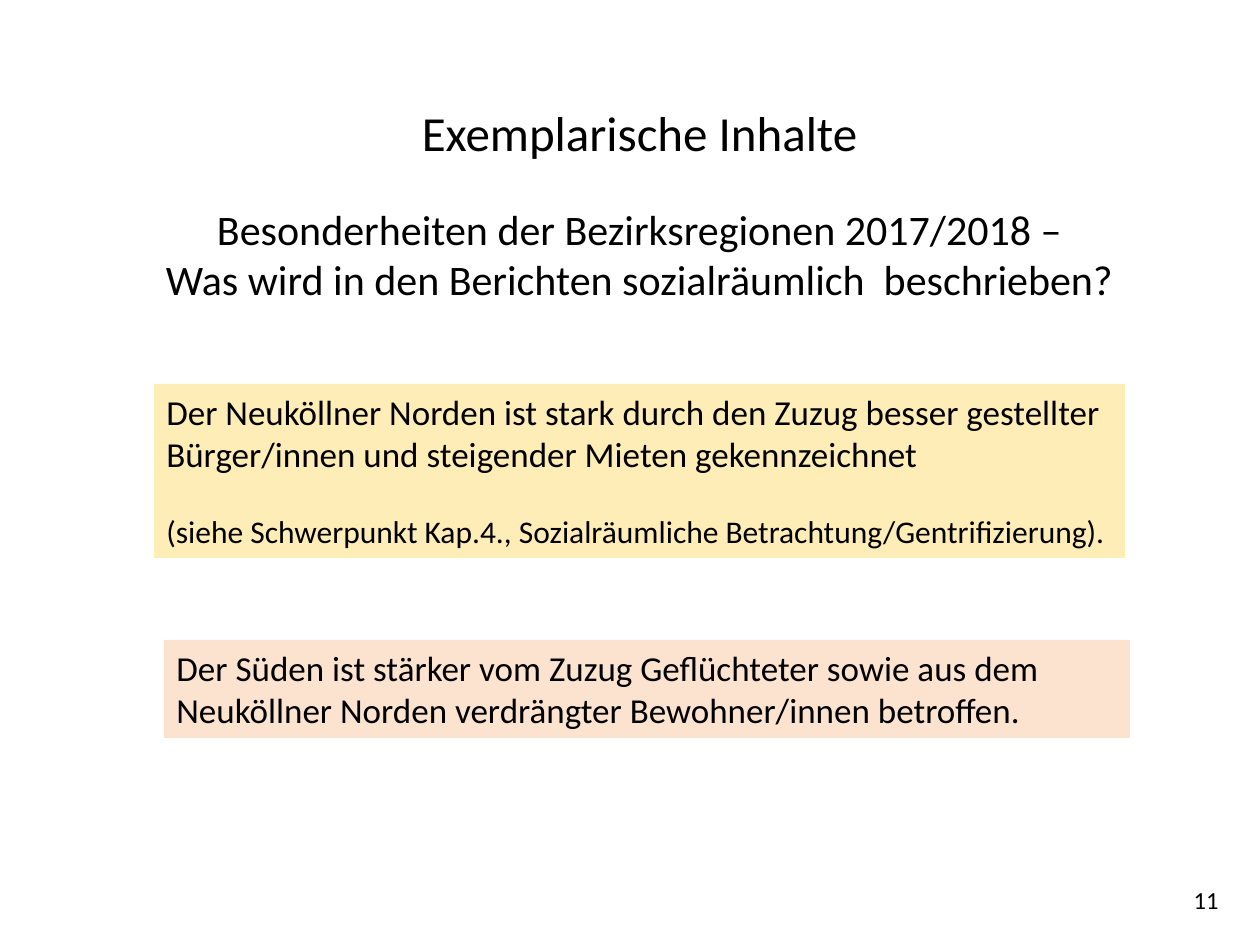
import pptx
import pptx.dml.color
import pptx.enum.shapes
import pptx.enum.text
import pptx.util

EMU_PER_PX = 914400 / 126
FONT = "Calibri"
COLORS = {"text": "000000", "north": "FFEDB7", "south": "FCE3CF"}
ALIGN = pptx.enum.text.PP_ALIGN


def px(length):
    """Convert whole pixels to EMU."""
    return pptx.util.Emu(round(length * EMU_PER_PX))


def rgb(name):
    """Look up a named colour."""
    return pptx.dml.color.RGBColor.from_string(COLORS[name])


def write(frame, text, size=20, align=ALIGN.LEFT, before=0):
    """Write one formatted paragraph, filling the empty first one if there is one."""
    paragraph = frame.paragraphs[0] if not frame.text else frame.add_paragraph()
    paragraph.alignment = align
    paragraph.space_before = pptx.util.Pt(before)
    run = paragraph.add_run()
    run.text = text
    run.font.name = FONT
    run.font.size = pptx.util.Pt(size)
    run.font.color.rgb = rgb("text")


class SlideBuilder:
    """Hold the current slide and add its styled elements."""

    def __init__(self, presentation):
        """Start a slide with a title only."""
        self.slide = presentation.slides.add_slide(presentation.slide_layouts[5])

    def fill_frame(self, shape, paragraphs):
        """Set up the text frame of a shape and write its paragraphs."""
        frame = shape.text_frame
        frame.word_wrap = True
        frame.auto_size = pptx.enum.text.MSO_AUTO_SIZE.NONE
        frame.vertical_anchor = pptx.enum.text.MSO_ANCHOR.TOP
        for text, style in paragraphs:
            write(frame, text, **style)

    def title(self, left, top, width, height, paragraphs):
        """Move and fill the title placeholder."""
        shape = self.slide.shapes.title
        shape.left, shape.top = px(left), px(top)
        shape.width, shape.height = px(width), px(height)
        self.fill_frame(shape, paragraphs)

    def panel(self, left, top, width, height, color, paragraphs):
        """Add a filled rectangle with text."""
        shape = self.slide.shapes.add_shape(
            pptx.enum.shapes.MSO_SHAPE.RECTANGLE,
            px(left), px(top), px(width), px(height))
        shape.shadow.inherit = False
        shape.fill.solid()
        shape.fill.fore_color.rgb = rgb(color)
        shape.line.fill.background()
        self.fill_frame(shape, paragraphs)

    def label(self, left, top, width, height, paragraphs):
        """Add a plain text box."""
        shape = self.slide.shapes.add_textbox(
            px(left), px(top), px(width), px(height))
        self.fill_frame(shape, paragraphs)


def main():
    """Build and save the slide."""
    presentation = pptx.Presentation()
    presentation.slide_width = px(1260)
    presentation.slide_height = px(945)
    builder = SlideBuilder(presentation)
    center = ALIGN.CENTER
    builder.label(937, 879, 294, 66, [("11", {"size": 14, "align": ALIGN.RIGHT})])
    builder.title(74, 96, 1131, 218, [
        ("Exemplarische Inhalte", {"size": 28, "align": center}),
        ("Besonderheiten der Bezirksregionen 2017/2018 –",
         {"size": 24, "align": center, "before": 24}),
        ("Was wird in den Berichten sozialräumlich  beschrieben?",
         {"size": 24, "align": center}),
    ])
    builder.panel(154, 384, 971, 174, "north", [
        ("Der Neuköllner Norden ist stark durch den Zuzug besser gestellter "
         "Bürger/innen und steigender Mieten gekennzeichnet", {}),
        ("(siehe Schwerpunkt Kap.4., Sozialräumliche Betrachtung/Gentrifizierung).",
         {"size": 18, "before": 21.5}),
    ])
    builder.panel(164, 640, 966, 98, "south", [
        ("Der Süden ist stärker vom Zuzug Geflüchteter sowie aus dem "
         "Neuköllner Norden verdrängter Bewohner/innen betroffen.", {}),
    ])
    presentation.save("out.pptx")


if __name__ == "__main__":
    main()
